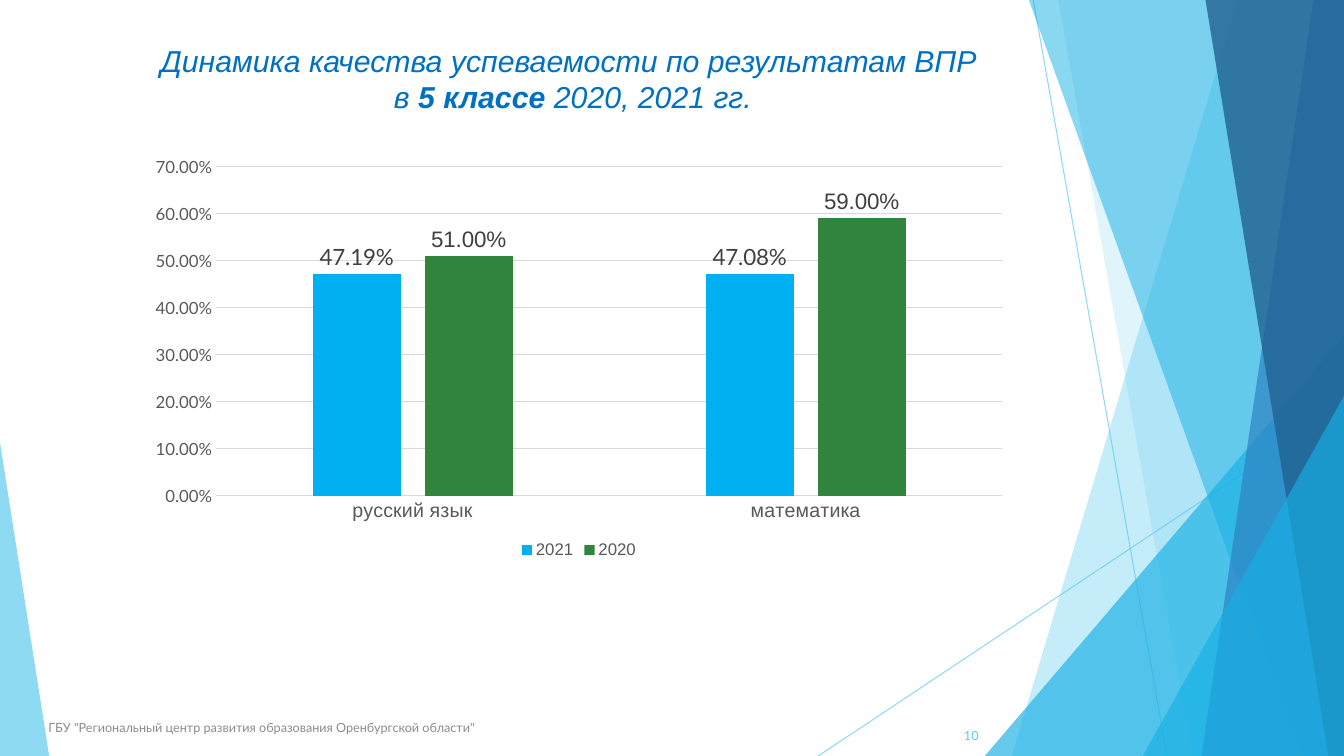
from pptx import Presentation
from pptx.chart.data import CategoryChartData as ChartData
from pptx.dml.color import RGBColor
from pptx.enum.chart import XL_CHART_TYPE as ChartType
from pptx.enum.chart import XL_LABEL_POSITION as LabelPosition
from pptx.enum.chart import XL_LEGEND_POSITION as LegendPosition
from pptx.enum.chart import XL_TICK_MARK as TickMark
from pptx.enum.shapes import MSO_CONNECTOR as Connector
from pptx.enum.shapes import MSO_SHAPE as Shape
from pptx.enum.text import MSO_ANCHOR as Anchor
from pptx.enum.text import PP_ALIGN as Align
from pptx.oxml.ns import qn
from pptx.oxml.xmlchemy import OxmlElement
from pptx.util import Cm, Pt

WIDTH, HEIGHT = 33.87, 19.05
SKY, CYAN, BLUE, NAVY = "5FCBEF", "17B0E4", "2E83C3", "226292"
PERCENT = "0.00%"


def color(code):
    return RGBColor.from_string(code)


class SlideBuilder:
    heading_font, body_font = "Arial", "Lato"
    text_gray, label_gray, grid_gray = "595959", "404040", "D9D9D9"

    def __init__(self, page):
        self.page = page

    def set_opacity(self, item, percent):
        for tint in item.element.spPr.iter(qn("a:srgbClr")):
            alpha = OxmlElement("a:alpha")
            alpha.set("val", str(percent * 1000))
            tint.append(alpha)

    def fill_shape(self, shape, code, opacity):
        shape.shadow.inherit = False
        shape.fill.solid()
        shape.fill.fore_color.rgb = color(code)
        shape.line.fill.background()
        self.set_opacity(shape, opacity)

    def line(self, start, end):
        line = self.page.shapes.add_connector(
            Connector.STRAIGHT, *map(Cm, start + end))
        line.line.color.rgb = color(SKY)
        line.line.width = Pt(0.75)
        self.set_opacity(line, 70)
        line.element.spPr.append(OxmlElement("a:effectLst"))

    def right_band(self, top_x, bottom_x, code, opacity):
        """Full-height band from a slanted left edge to the right page edge."""
        outline = self.page.shapes.build_freeform(Cm(top_x), 0, scale=1.0)
        corners = [(WIDTH, 0), (WIDTH, HEIGHT), (bottom_x, HEIGHT)]
        outline.add_line_segments([(Cm(x), Cm(y)) for x, y in corners])
        self.fill_shape(outline.convert_to_shape(), code, opacity)

    def corner_triangle(self, left, top, width, apex, code, opacity):
        triangle = self.page.shapes.add_shape(
            Shape.ISOSCELES_TRIANGLE, *map(Cm, (left, top, width, HEIGHT - top)))
        triangle.adjustments[0] = apex
        self.fill_shape(triangle, code, opacity)

    def text(self, place, lines, size, font, code, align=Align.LEFT,
             anchor=Anchor.MIDDLE, italic=False):
        """Each line is a list of (words, bold) spans."""
        box = self.page.shapes.add_textbox(*map(Cm, place))
        frame = box.text_frame
        frame.word_wrap = True
        frame.vertical_anchor = anchor
        para = frame.paragraphs[0]
        para.alignment = align
        for number, spans in enumerate(lines):
            if number:
                para.add_line_break()
            for words, bold in spans:
                span = para.add_run()
                span.text = words
                self.style_font(span.font, size, font, code)
                span.font.bold = bold
                span.font.italic = italic

    def style_font(self, font, size, name, code):
        font.size = Pt(size)
        font.name = name
        font.color.rgb = color(code)

    def style_axis(self, axis, size, font):
        axis.major_tick_mark = axis.minor_tick_mark = TickMark.NONE
        self.style_font(axis.tick_labels.font, size, font, self.text_gray)

    def style_rule(self, line):
        line.color.rgb = color(self.grid_gray)
        line.width = Pt(0.75)

    def column_chart(self, place, categories, series_list):
        """Each series is (name, values, fill, label font)."""
        data = ChartData(number_format=PERCENT)
        data.categories = categories
        for name, values, _, _ in series_list:
            data.add_series(name, values)
        chart = self.page.shapes.add_chart(
            ChartType.COLUMN_CLUSTERED, *map(Cm, place), data).chart
        chart.has_title = False
        self.style_font(chart.font, 10, self.body_font, "000000")

        # Axes and gridlines
        self.style_axis(chart.category_axis, 14, self.heading_font)
        self.style_rule(chart.category_axis.format.line)
        scale = chart.value_axis
        self.style_axis(scale, 12, self.body_font)
        scale.minimum_scale, scale.maximum_scale, scale.major_unit = 0, 0.7, 0.1
        scale.tick_labels.number_format = PERCENT
        scale.tick_labels.number_format_is_linked = False
        scale.format.line.fill.background()
        self.style_rule(scale.major_gridlines.format.line)

        # Legend
        chart.has_legend = True
        chart.legend.position = LegendPosition.BOTTOM
        chart.legend.include_in_layout = False
        self.style_font(chart.legend.font, 12, self.heading_font, self.text_gray)

        # Columns and their labels
        plot = chart.plots[0]
        plot.gap_width, plot.overlap = 219, -27
        plot.vary_by_categories = False
        for series, (_, _, code, font) in zip(plot.series, series_list):
            series.format.fill.solid()
            series.format.fill.fore_color.rgb = color(code)
            series.invert_if_negative = False
            labels = series.data_labels
            labels.show_value = True
            labels.number_format = PERCENT
            labels.number_format_is_linked = False
            labels.position = LabelPosition.OUTSIDE_END
            self.style_font(labels.font, 16, font, self.label_gray)


def main():
    deck = Presentation()
    deck.slide_width, deck.slide_height = Cm(WIDTH), Cm(HEIGHT)
    slide = SlideBuilder(deck.slides.add_slide(deck.slide_layouts[6]))

    # Faceted decoration, back to front
    slide.line((26.04, 0), (29.41, HEIGHT))
    slide.line((WIDTH, 10.24), (20.62, HEIGHT))
    slide.right_band(31.19, 25.5, SKY, 36)
    slide.right_band(26.67, 30.05, SKY, 20)
    slide.corner_triangle(24.82, 8.46, 9.05, 1, CYAN, 66)
    slide.right_band(25.93, 32.79, CYAN, 50)
    slide.right_band(33.1, 30.28, BLUE, 70)
    slide.right_band(30.38, 33.48, NAVY, 80)
    slide.corner_triangle(28.8, 9.98, 5.07, 1, CYAN, 66)
    slide.corner_triangle(0, 11.15, 1.24, 0, SKY, 70)

    # Footer and page number
    footer = 'ГБУ "Региональный центр развития образования Оренбургской области"'
    slide.text((0.97, 17.81, 17.5, 1.02), [[(footer, False)]],
               9, slide.body_font, "8C8C8C")
    slide.text((23.01, 18.03, 1.9, 1.02), [[("10", False)]],
               9, slide.body_font, SKY, Align.RIGHT)

    # Title
    title = [
        [("Динамика качества успеваемости по результатам ВПР ", False)],
        [("в ", False), ("5 классе ", True), ("2020, 2021 гг.", False)],
    ]
    slide.text((1.88, 0.94, 25.12, 2.08), title, 21.6, slide.heading_font,
               "0070C0", Align.CENTER, Anchor.TOP, italic=True)

    # Results chart
    slide.column_chart(
        (3.48, 3.73, 22.22, 10.46),
        ["русский язык", "математика"],
        [("2021", (0.4719, 0.4708), "00B0F0", slide.body_font),
         ("2020", (0.51, 0.59), "31843D", slide.heading_font)])

    deck.save("out.pptx")


if __name__ == "__main__":
    main()
